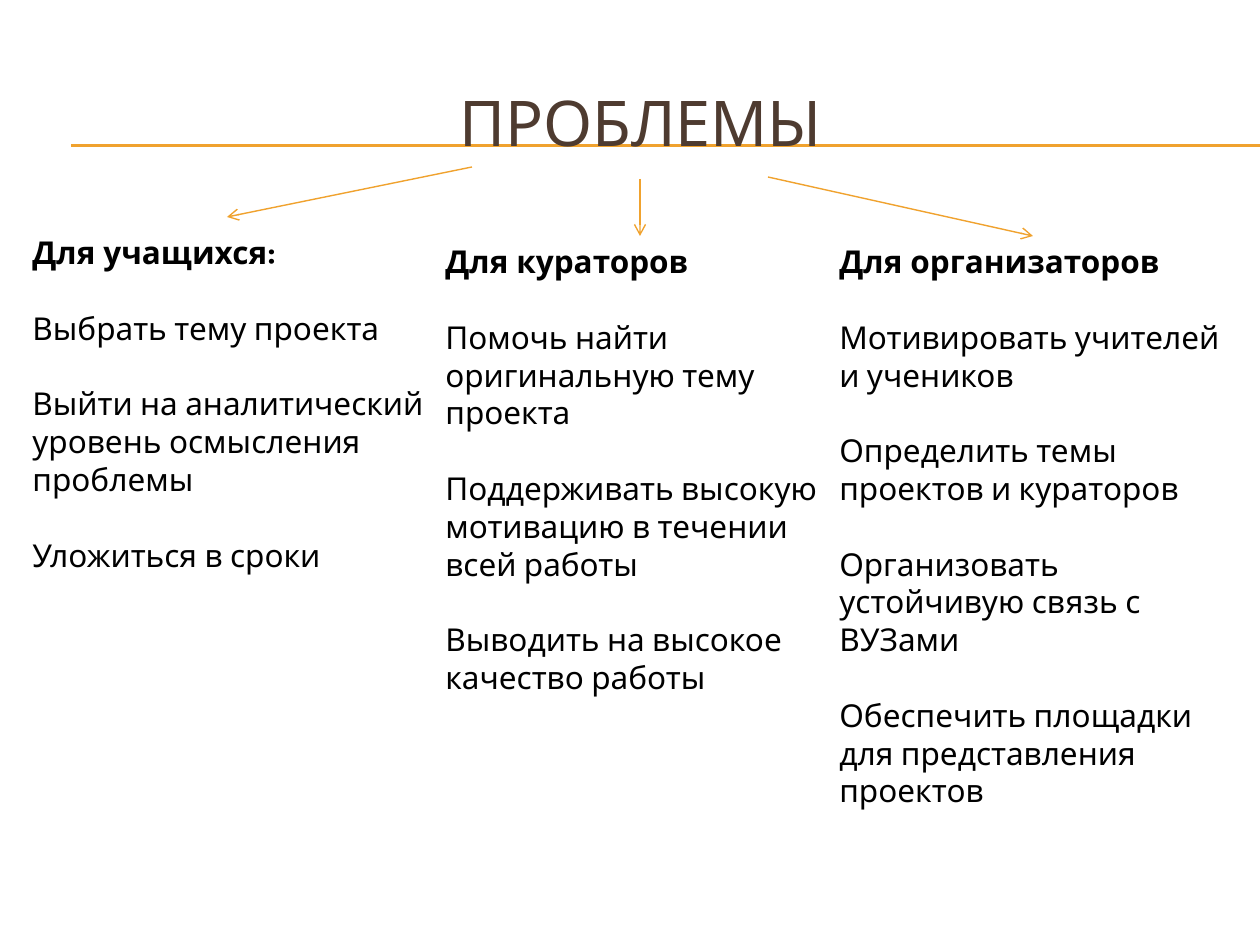
from dataclasses import dataclass
from lxml.etree import SubElement
from pptx import Presentation
from pptx.dml.color import RGBColor
from pptx.enum.shapes import MSO_CONNECTOR
from pptx.enum.text import MSO_ANCHOR, MSO_AUTO_SIZE, PP_ALIGN
from pptx.oxml.ns import qn
from pptx.util import Pt

SCALE = 914400 / 126


@dataclass(frozen=True)
class Theme:
    font: str = "Karla"
    head: str = "4E3B30"
    text: str = "000000"
    line: str = "F0A22E"
    big: float = 36
    base: float = 18
    gap: float = 21.6
    rule: float = 0.75
    arrow: float = 0.79


THEME = Theme()

LISTS = [
    ((433, 236, 403, 471), "Для кураторов", [
        "Помочь найти оригинальную тему проекта",
        "Поддерживать высокую мотивацию в течении всей работы",
        "Выводить на высокое качество работы",
    ]),
    ((827, 236, 413, 547), "Для организаторов", [
        "Мотивировать учителей и учеников",
        "Определить темы проектов и кураторов",
        "Организовать устойчивую связь с ВУЗами",
        "Обеспечить площадки для представления проектов",
    ]),
    ((20, 227, 433, 432), "Для учащихся:", [
        "Выбрать тему проекта",
        "Выйти на аналитический уровень осмысления проблемы",
        "Уложиться в сроки",
    ]),
]

ARROWS = [
    (472, 167, 227, 217),
    (640, 179, 640, 236),
    (768, 177, 1033, 236),
]


def px(*vals):
    return [round(val * SCALE) for val in vals]


def add_run(para, text, size, color, bold=False):
    run = para.add_run()
    run.text = text
    font = run.font
    font.name = THEME.font
    font.size = Pt(size)
    font.bold = bold
    font.color.rgb = RGBColor.from_string(color)


def add_line(slide, ends, width, arrow=False):
    line = slide.shapes.add_connector(MSO_CONNECTOR.STRAIGHT, *px(*ends))
    line.line.color.rgb = RGBColor.from_string(THEME.line)
    line.line.width = Pt(width)
    if arrow:
        SubElement(line.line._get_or_add_ln(), qn("a:tailEnd"), type="arrow")
    SubElement(line.element.spPr, qn("a:effectLst"))


def add_title(slide, box, text):
    left, top, width, height = box
    for shift in (82, 83):
        add_line(slide, (left + 29, top + shift, 1260, top + shift), THEME.rule)
    title = slide.shapes.title
    title.left, title.top, title.width, title.height = px(*box)
    title.element.getparent().append(title.element)
    frame = title.text_frame
    frame.word_wrap = True
    frame.vertical_anchor = MSO_ANCHOR.MIDDLE
    para = frame.paragraphs[0]
    para.alignment = PP_ALIGN.CENTER
    add_run(para, text, THEME.big, THEME.head)


def add_list(slide, box, head, items):
    frame = slide.shapes.add_textbox(*px(*box)).text_frame
    frame.word_wrap = True
    frame.auto_size = MSO_AUTO_SIZE.SHAPE_TO_FIT_TEXT
    add_run(frame.paragraphs[0], head, THEME.base, THEME.text, True)
    for item in items:
        para = frame.add_paragraph()
        para.space_before = Pt(THEME.gap)
        add_run(para, item, THEME.base, THEME.text)


def main():
    deck = Presentation()
    deck.slide_width, deck.slide_height = px(1260, 945)
    slide = deck.slides.add_slide(deck.slide_layouts[5])
    add_title(slide, (42, 63, 1197, 116), "ПРОБЛЕМЫ")
    for box, head, items in LISTS:
        add_list(slide, box, head, items)
    for ends in ARROWS:
        add_line(slide, ends, THEME.arrow, True)
    deck.save("out.pptx")


if __name__ == "__main__":
    main()
